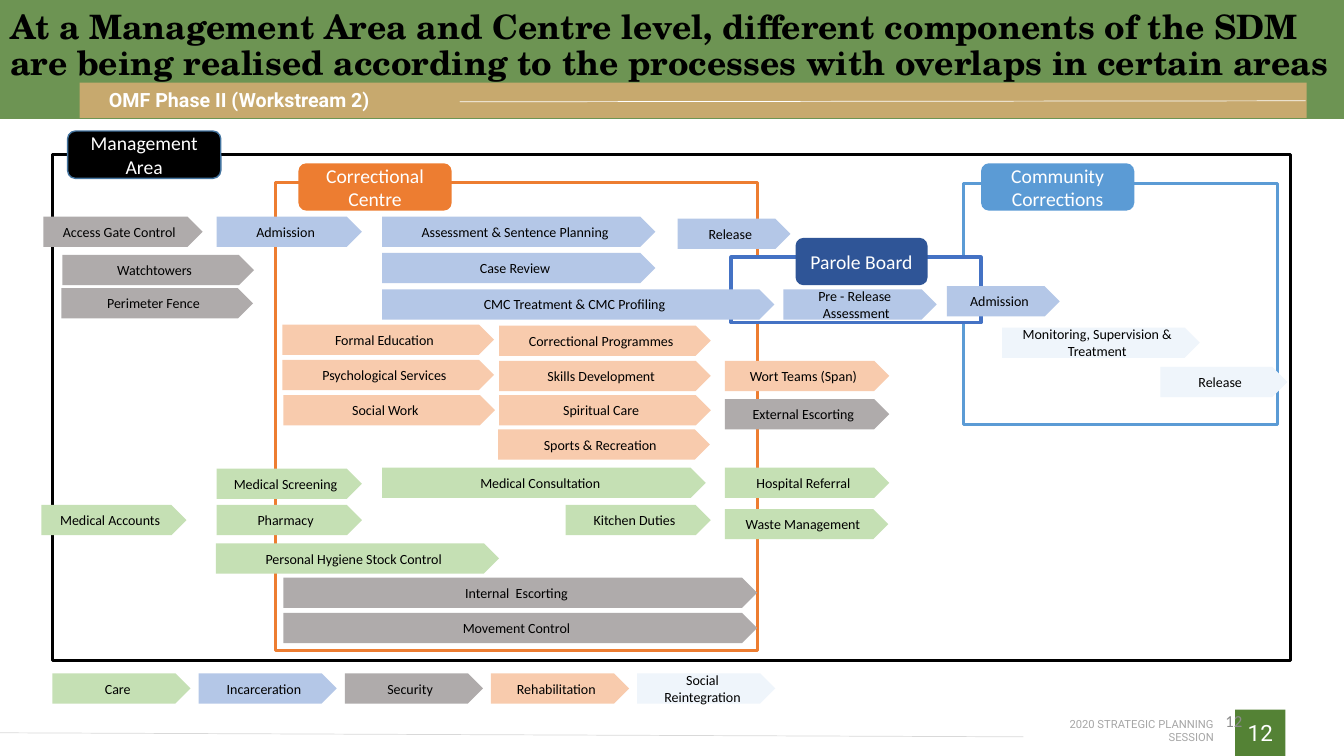
from lxml import etree
from pptx import Presentation
from pptx.dml.color import RGBColor as RGB
from pptx.enum.shapes import MSO_CONNECTOR as Conn, MSO_SHAPE as Kind
from pptx.enum.text import MSO_ANCHOR as Anchor, PP_ALIGN as Align
from pptx.oxml.ns import qn
from pptx.util import Inches, Pt

BLACK = RGB(0x00, 0x00, 0x00)
WHITE = RGB(0xFF, 0xFF, 0xFF)
GREEN = RGB(0x54, 0x82, 0x35)
GOLD = RGB(0xC7, 0xA9, 0x6E)
RULE = RGB(0xD9, 0xD9, 0xD9)
MUTED = RGB(0xA6, 0xA6, 0xA6)
DIM = RGB(0x8C, 0x8C, 0x8C)
ORANGE = RGB(0xED, 0x7D, 0x31)
BLUE = RGB(0x5B, 0x9B, 0xD5)
ROYAL = RGB(0x44, 0x72, 0xC4)
NAVY = RGB(0x2F, 0x55, 0x97)
STEEL = RGB(0x43, 0x73, 0x9E)

# Process families
CARE = RGB(0xC5, 0xE0, 0xB4)
JAIL = RGB(0xB4, 0xC7, 0xE7)
GUARD = RGB(0xAF, 0xAB, 0xAB)
REHAB = RGB(0xF8, 0xCB, 0xAD)
SOCIAL = RGB(0xEF, 0xF5, 0xFB)

HIGH = 0.3  # height of a process arrow

# Left, top, width, outline
FRAMES = [
    (0.52, 1.53, 12.28, 5.02, BLACK),
    (2.73, 1.81, 4.78, 4.64, ORANGE),
    (9.56, 1.82, 3.11, 2.39, BLUE),
    (7.25, 2.55, 2.48, 0.65, ROYAL),
]

# Name, left, top, width, fill, outline
TABS = [
    ("Management Area", 0.67, 1.3, 1.52, BLACK, STEEL),
    ("Correctional Centre", 2.96, 1.62, 1.52, ORANGE, None),
    ("Community Corrections", 9.73, 1.62, 1.52, BLUE, None),
    ("Parole Board", 7.89, 2.36, 1.31, NAVY, None),
]

# Name, left, top, width
STEPS = {
    JAIL: [
        ("Admission", 2.15, 2.15, 1.44),
        ("Assessment & Sentence Planning", 3.79, 2.15, 2.71),
        ("Case Review", 3.79, 2.51, 2.71),
        ("CMC Treatment & CMC Profiling", 3.79, 2.87, 3.89),
        ("Release", 6.72, 2.17, 1.12),
        ("Pre - Release  Assessment", 7.77, 2.87, 1.52),
        ("Admission", 9.39, 2.84, 1.12),
    ],
    GUARD: [
        ("Access Gate Control", 0.43, 2.15, 1.58),
        ("Watchtowers", 0.62, 2.53, 1.9),
        ("Perimeter Fence", 0.61, 2.86, 1.9),
        ("External Escorting", 7.19, 3.96, 1.63),
        ("Internal  Escorting", 2.81, 5.73, 4.7),
        ("Movement Control", 2.81, 6.08, 4.7),
    ],
    REHAB: [
        ("Formal Education", 2.8, 3.22, 2.1),
        ("Psychological Services", 2.8, 3.57, 2.1),
        ("Social Work", 2.81, 3.92, 2.1),
        ("Correctional Programmes", 4.95, 3.23, 2.1),
        ("Skills Development", 4.95, 3.58, 2.1),
        ("Spiritual Care", 4.95, 3.92, 2.1),
        ("Sports & Recreation", 4.94, 4.26, 2.1),
        ("Wort Teams (Span)", 7.19, 3.58, 1.63),
    ],
    CARE: [
        ("Medical Screening", 2.15, 4.65, 1.44),
        ("Medical Consultation", 3.79, 4.64, 3.21),
        ("Hospital Referral", 7.19, 4.64, 1.63),
        ("Medical Accounts", 0.41, 5.01, 1.44),
        ("Pharmacy", 2.15, 5.01, 1.44),
        ("Kitchen Duties", 5.61, 5.01, 1.44),
        ("Waste Management", 7.19, 5.05, 1.62),
        ("Personal Hygiene Stock Control", 2.14, 5.39, 2.81),
    ],
    SOCIAL: [
        ("Monitoring, Supervision & Treatment", 9.94, 3.25, 1.96),
        ("Release", 11.51, 3.64, 1.26),
    ],
}

LEGEND = [("Care", CARE), ("Incarceration", JAIL), ("Security", GUARD),
          ("Rehabilitation", REHAB), ("Social Reintegration", SOCIAL)]


def write(shape, text, size, color, face="Calibri", align=Align.CENTER,
          bold=False):
    frame = shape.text_frame
    frame.word_wrap = True
    frame.vertical_anchor = Anchor.MIDDLE
    frame.text = text
    para = frame.paragraphs[0]
    para.alignment = align
    font = para.font
    font.name, font.size, font.bold = face, Pt(size), bold
    font.color.rgb = color
    return para


def block(slide, kind, left, top, width, height, fill, line=None, weight=1):
    shape = slide.shapes.add_shape(
        kind, Inches(left), Inches(top), Inches(width), Inches(height))
    shape.shadow.inherit = False
    shape.fill.solid()
    shape.fill.fore_color.rgb = fill
    if line is None:
        shape.line.fill.background()
    else:
        shape.line.color.rgb = line
        shape.line.width = Pt(weight)
    return shape


def arrow(slide, text, left, top, width, fill):
    shape = block(slide, Kind.PENTAGON, left, top, width, HIGH, fill)
    write(shape, text, 10, BLACK)


def label(slide, text, left, top, width, height, size, color, inset=0, **look):
    box = slide.shapes.add_textbox(
        Inches(left), Inches(top), Inches(width), Inches(height))
    frame = box.text_frame
    frame.margin_left = frame.margin_right = Inches(inset)
    frame.margin_top = frame.margin_bottom = 0
    return write(box, text, size, color, **look)


def rule(slide, x1, y1, x2, y2, color):
    line = slide.shapes.add_connector(
        Conn.STRAIGHT, Inches(x1), Inches(y1), Inches(x2), Inches(y2))
    line.line.color.rgb = color
    line.line.width = Pt(0.5)
    etree.SubElement(line._element.spPr, qn("a:effectLst"))


def header(slide):
    band = block(slide, Kind.RECTANGLE, 0, 0, 13.33, 1.18, GREEN)
    tint = band._element.spPr.find(".//" + qn("a:srgbClr"))
    etree.SubElement(tint, qn("a:alpha"), val="85000")
    block(slide, Kind.RECTANGLE, 0.79, 0.82, 12.17, 0.35, GOLD)
    rule(slide, 4.56, 1.01, 12.95, 1, WHITE)
    label(slide, "OMF Phase II (Workstream 2)", 1.08, 0.87, 3.48, 0.24, 14,
          WHITE, face="Roboto", align=Align.LEFT, bold=True)

    # Title, raised above the band
    title = slide.shapes.title
    title.left, title.top = Inches(0), Inches(0.05)
    title.width, title.height = Inches(13.33), Inches(1.11)
    para = write(title, "At a Management Area and Centre level, different "
                 "components of the SDM are being realised according to the "
                 "processes with overlaps in certain areas",
                 24, BLACK, "TeX Gyre Schola", Align.LEFT, True)
    para.line_spacing = 0.9
    title.text_frame.vertical_anchor = Anchor.TOP
    band._element.getparent().append(title._element)


def footer(slide):
    page = block(slide, Kind.RECTANGLE, 12.25, 7.04, 0.5, 0.46, GREEN)
    write(page, "12", 16, WHITE, "Roboto")
    label(slide, "2020 STRATEGIC PLANNING SESSION", 10.15, 7.18, 1.89, 0.13,
          8, MUTED, face="Roboto", align=Align.RIGHT)
    rule(slide, 10.15, 7.31, 0, 7.27, RULE)
    label(slide, "12", 9.42, 6.95, 3, 0.4, 12, DIM, inset=0.1,
          align=Align.RIGHT)


def main():
    deck = Presentation()
    deck.slide_width, deck.slide_height = Inches(13.33), Inches(7.5)
    slide = deck.slides.add_slide(deck.slide_layouts[5])
    header(slide)
    footer(slide)

    # Areas
    for left, top, width, height, line in FRAMES:
        block(slide, Kind.RECTANGLE, left, top, width, height, WHITE, line,
              2.25)
    for text, left, top, width, fill, line in TABS:
        tab = block(slide, Kind.ROUNDED_RECTANGLE, left, top, width, 0.47,
                    fill, line)
        write(tab, text, 14, WHITE)

    # Processes
    for fill, steps in STEPS.items():
        for text, left, top, width in steps:
            arrow(slide, text, left, top, width, fill)

    # Legend
    for i, (text, fill) in enumerate(LEGEND):
        arrow(slide, text, 0.52 + 1.45 * i, 6.68, 1.37, fill)

    deck.save("out.pptx")


if __name__ == "__main__":
    main()
